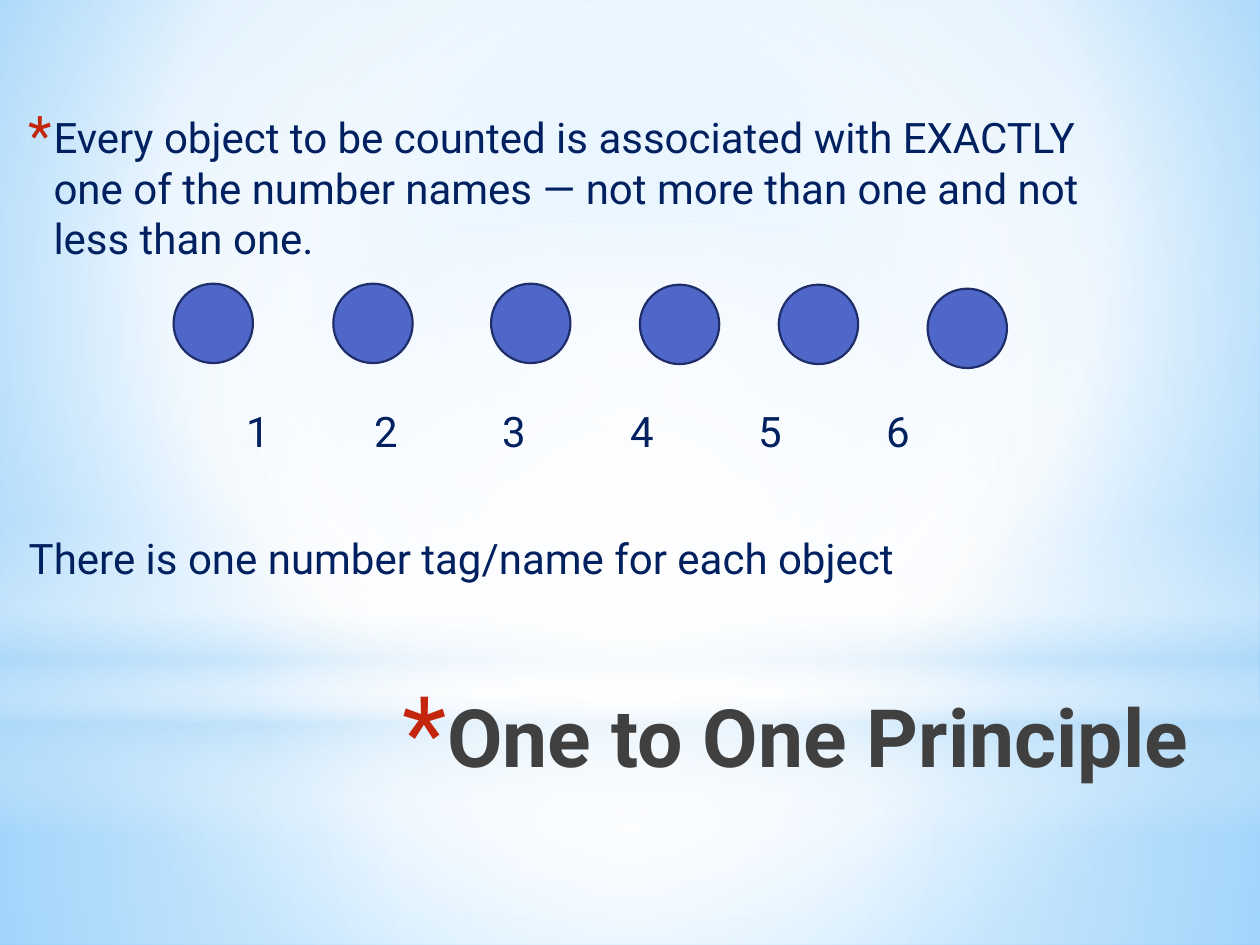
from dataclasses import dataclass

import pptx
import pptx.dml.color
import pptx.enum.shapes
import pptx.enum.text
import pptx.oxml
import pptx.oxml.ns
import pptx.util
from lxml import etree

Cm = pptx.util.Cm
Pt = pptx.util.Pt
RGBColor = pptx.dml.color.RGBColor
MSO_SHAPE = pptx.enum.shapes.MSO_SHAPE
PP_ALIGN = pptx.enum.text.PP_ALIGN
qn = pptx.oxml.ns.qn

FONT = "Roboto"
NAVY = RGBColor(0x00, 0x20, 0x60)
CHARCOAL = RGBColor(0x40, 0x40, 0x40)
RED = RGBColor(0xC3, 0x26, 0x0C)
COUNTER_FILL = RGBColor(0x4E, 0x67, 0xC8)
COUNTER_LINE = RGBColor(0x1F, 0x2E, 0x69)
WHITE = RGBColor(0xFF, 0xFF, 0xFF)
PALE = RGBColor(0xB4, 0xDC, 0xFA)
SKY = RGBColor(0x9E, 0xD5, 0xFF)
BLUE = RGBColor(0x5B, 0xB9, 0xFF)

WIDTH, HEIGHT = 25.4, 19.05
COUNTER_SIZE = 1.6
NUMBER_LEFT, NUMBER_TOP, NUMBER_STEP = 4.6, 8.18, 2.58
NUMBER_WIDTH, NUMBER_HEIGHT = 1.2, 1.05
CENTRE = (50, 50, 50, 50)


@dataclass
class Stop:
    position: int
    color: RGBColor
    opacity: int = 100


@dataclass
class Glow:
    """A full-width band; focus is None for a vertical linear gradient."""
    shape: int
    top: float
    height: float
    stops: list
    focus: tuple | None = CENTRE


@dataclass
class Counter:
    left: float
    top: float


GLOWS = [
    Glow(MSO_SHAPE.RECTANGLE, 14.17, 4.88,
         [Stop(0, WHITE, 91), Stop(37, WHITE, 76), Stop(100, PALE, 79)]),
    Glow(MSO_SHAPE.RECTANGLE, 0, 14.17,
         [Stop(0, WHITE, 89), Stop(48, WHITE, 62), Stop(100, PALE, 79)]),
    Glow(MSO_SHAPE.RECTANGLE, 10.46, 6.35,
         [Stop(0, WHITE, 0), Stop(29, WHITE, 30), Stop(45, PALE, 40),
          Stop(55, WHITE, 26), Stop(65, PALE, 60), Stop(100, WHITE, 0)], None),
    Glow(MSO_SHAPE.OVAL, 4.45, 14.17, [Stop(0, WHITE), Stop(56, WHITE, 0)]),
]
COUNTERS = [Counter(3.5, 5.72), Counter(6.72, 5.72), Counter(9.9, 5.72),
            Counter(12.9, 5.74), Counter(15.7, 5.74), Counter(18.7, 5.82)]


def set_gradient(fill, owner, stops: list, focus: tuple | None) -> None:
    """Give the owner element a gradient in place of a solid fill."""
    fill.solid()
    solid = next(owner.iter(qn("a:solidFill")))
    grad = pptx.oxml.parse_xml(
        f'<a:gradFill {pptx.oxml.ns.nsdecls("a")} rotWithShape="1"><a:gsLst/></a:gradFill>')
    for stop in stops:
        gs = etree.SubElement(grad[0], qn("a:gs"), pos=str(stop.position * 1000))
        color = etree.SubElement(gs, qn("a:srgbClr"), val=str(stop.color))
        if stop.opacity < 100:
            etree.SubElement(color, qn("a:alpha"), val=str(stop.opacity * 1000))
    if focus is None:
        etree.SubElement(grad, qn("a:lin"), ang="5400000", scaled="0")
    else:
        path = etree.SubElement(grad, qn("a:path"), path="circle")
        sides = {side: str(value * 1000) for side, value in zip("ltrb", focus)}
        etree.SubElement(path, qn("a:fillToRect"), sides)
    solid.getparent().replace(solid, grad)


def add_glow(slide, glow: Glow) -> None:
    s = slide.shapes.add_shape(glow.shape, 0, Cm(glow.top), Cm(WIDTH), Cm(glow.height))
    s.shadow.inherit = False
    s.line.fill.background()
    set_gradient(s.fill, s._element.spPr, glow.stops, glow.focus)


def add_counter(slide, counter: Counter) -> None:
    s = slide.shapes.add_shape(MSO_SHAPE.OVAL, Cm(counter.left), Cm(counter.top),
                               Cm(COUNTER_SIZE), Cm(COUNTER_SIZE))
    s.shadow.inherit = False
    s.fill.solid()
    s.fill.fore_color.rgb = COUNTER_FILL
    s.line.color.rgb = COUNTER_LINE
    s.line.width = Pt(1.25)


def set_indent(p, margin: float, indent: float = 0) -> None:
    pPr = p._p.get_or_add_pPr()
    pPr.set("marL", str(Cm(margin)))
    pPr.set("indent", str(Cm(indent)))


def add_bullet(p, percent: int) -> None:
    pPr = p._p.get_or_add_pPr()
    color = etree.SubElement(pPr, qn("a:buClr"))
    etree.SubElement(color, qn("a:srgbClr"), val=str(RED))
    etree.SubElement(pPr, qn("a:buSzPct"), val=str(percent * 1000))
    etree.SubElement(pPr, qn("a:buFont"), typeface=FONT)
    etree.SubElement(pPr, qn("a:buChar"), char="*")


def add_run(p, text: str, size: float, color: RGBColor, bold: bool = False) -> None:
    r = p.add_run()
    r.text = text
    r.font.name = FONT
    r.font.size = Pt(size)
    r.font.bold = bold
    r.font.color.rgb = color


def add_number(slide, number: int) -> None:
    left = NUMBER_LEFT + (number - 1) * NUMBER_STEP
    tf = slide.shapes.add_textbox(Cm(left), Cm(NUMBER_TOP),
                                  Cm(NUMBER_WIDTH), Cm(NUMBER_HEIGHT)).text_frame
    tf.word_wrap = True
    tf.margin_left = tf.margin_right = tf.margin_top = tf.margin_bottom = 0
    p = tf.paragraphs[0]
    p.alignment = PP_ALIGN.CENTER
    add_run(p, str(number), 24, NAVY)


def add_title(slide) -> None:
    title = slide.shapes.title
    title.left, title.top, title.width, title.height = Cm(5.1), Cm(13.72), Cm(19.1), Cm(3.78)
    slide.shapes._spTree.append(title._element)  # in front of the glows
    tf = title.text_frame
    tf.word_wrap = True
    tf.vertical_anchor = pptx.enum.text.MSO_ANCHOR.TOP
    p = tf.paragraphs[0]
    set_indent(p, 0.89, -0.89)
    add_bullet(p, 128)
    p.alignment = PP_ALIGN.RIGHT
    add_run(p, "One to One Principle", 46, CHARCOAL, bold=True)


def add_body(slide) -> None:
    tf = slide.shapes.add_textbox(Cm(0.2), Cm(2.13), Cm(22.6), Cm(11.48)).text_frame
    tf.word_wrap = True

    p = tf.paragraphs[0]
    set_indent(p, 0.63, -0.5)
    add_bullet(p, 130)
    add_run(p, "Every object to be counted is associated with EXACTLY one of the "
               "number names — not more than one and not less than one.", 24, NAVY)

    # The space above leaves room for the counters and their numbers
    p = tf.add_paragraph()
    set_indent(p, 0.13)
    p.space_before = Pt(154)
    add_run(p, "There is one number tag/name for each object", 24, NAVY)


def main() -> None:
    prs = pptx.Presentation()
    prs.slide_width, prs.slide_height = Cm(WIDTH), Cm(HEIGHT)
    slide = prs.slides.add_slide(prs.slide_layouts.get_by_name("Title Only"))

    # Background
    set_gradient(slide.background.fill, slide._element,
                 [Stop(0, SKY), Stop(60, WHITE), Stop(100, BLUE)], (20, 10, 20, 60))
    for glow in GLOWS:
        add_glow(slide, glow)

    # Title and text
    add_title(slide)
    add_body(slide)

    # Counters and number names
    for number, counter in enumerate(COUNTERS, start=1):
        add_counter(slide, counter)
        add_number(slide, number)
    prs.save("out.pptx")


if __name__ == "__main__":
    main()
